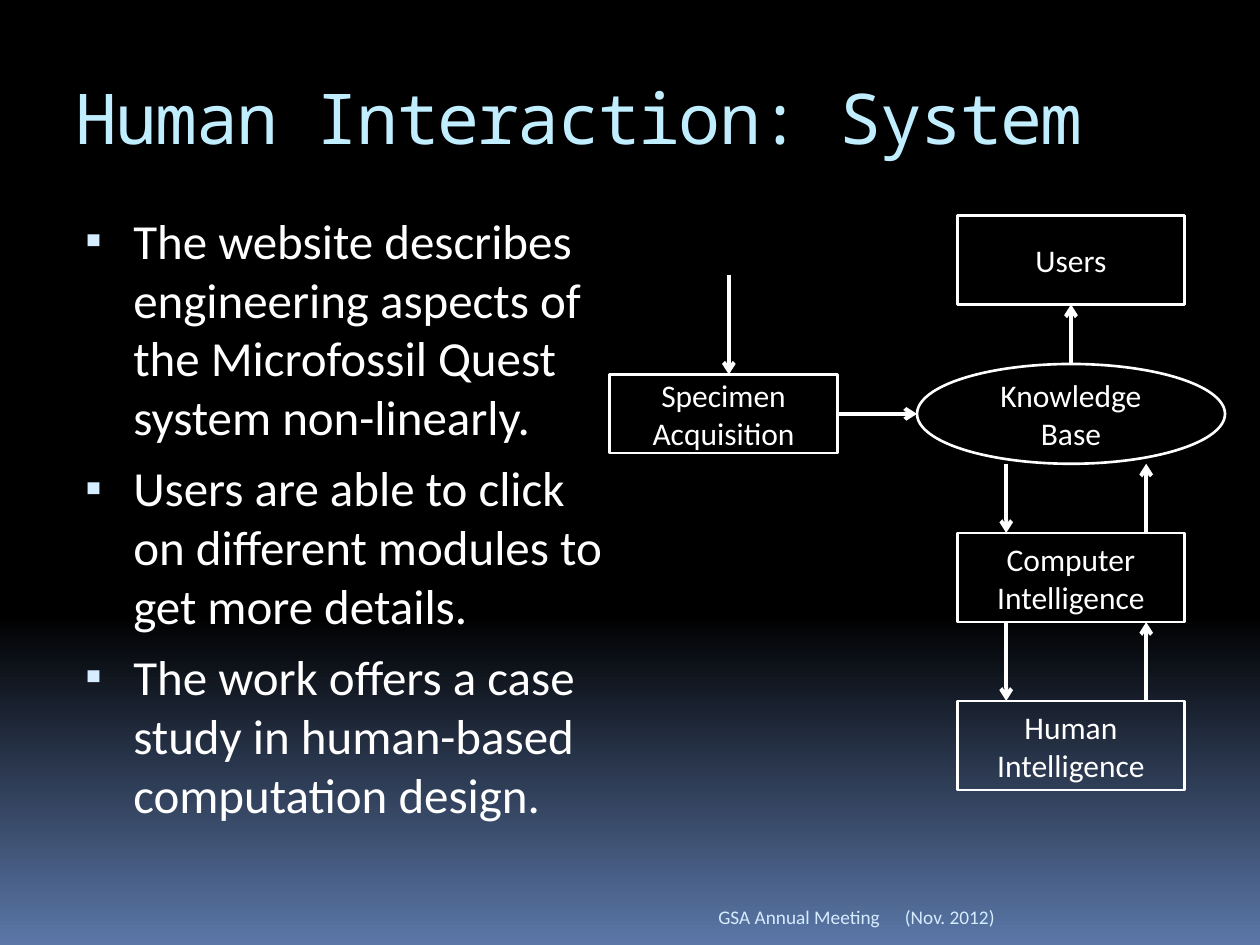
from copy import deepcopy

from pptx import Presentation
from pptx.dml.color import RGBColor as RGB
from pptx.enum.shapes import MSO_CONNECTOR as Link, MSO_SHAPE as Kind
from pptx.enum.text import MSO_ANCHOR as Anchor, PP_ALIGN as Align
from pptx.oxml.ns import qn
from pptx.oxml.xmlchemy import OxmlElement as Node
from pptx.util import Pt

HUES = {"white": "FFFFFF", "title": "C1EEFF", "pale": "D6ECFF",
        "night": "000000", "dusk": "5B77A8"}
SANS = "Calibri"
MONO = "Noto Sans Mono"

HEAD = {"size": Pt(40), "name": MONO, "hue": "title"}
BODY = {"size": Pt(28), "name": SANS, "hue": "white"}
FOOT = {"size": Pt(11), "name": SANS, "hue": "pale"}
NODE = {"size": Pt(18), "name": SANS, "hue": "white"}

POINTS = [
    "The website describes engineering aspects of the Microfossil Quest "
    "system non-linearly.",
    "Users are able to click on different modules to get more details.",
    "The work offers a case study in human-based computation design.",
]


def hue(key):
    return RGB.from_string(HUES[key])


def style(font, look):
    for key, value in look.items():
        if key == "hue":
            font.color.rgb = hue(value)
        else:
            setattr(font, key, value)


def write(frame, lines, look, align=Align.LEFT, anchor=Anchor.TOP):
    frame.word_wrap = True
    frame.vertical_anchor = anchor
    for i, line in enumerate(lines):
        para = frame.add_paragraph() if i else frame.paragraphs[0]
        para.alignment = align
        run = para.add_run()
        run.text = line
        style(run.font, look)
    return frame


def add_text(slide, area, lines, look, **place):
    box = slide.shapes.add_textbox(*map(Pt, area))
    return write(box.text_frame, lines, look, **place)


def add_node(slide, kind, area, label):
    shape = slide.shapes.add_shape(kind, *map(Pt, area))
    shape.shadow.inherit = False
    shape.fill.background()
    shape.line.color.rgb = hue("white")
    shape.line.width = Pt(1.5)
    write(shape.text_frame, [label], NODE, Align.CENTER, Anchor.MIDDLE)
    return shape


def add_arrow(slide, x1, y1, x2, y2, start=None, end=None):
    line = slide.shapes.add_connector(Link.STRAIGHT, *map(Pt, (x1, y1, x2, y2)))
    line.line.color.rgb = hue("white")
    line.line.width = Pt(2.25)
    tip = Node("a:tailEnd")
    tip.set("type", "arrow")
    line.line._get_or_add_ln().append(tip)
    line._element.spPr.append(Node("a:effectLst"))
    if start:
        line.begin_connect(*start)
    if end:
        line.end_connect(*end)


def add_bullet(para):
    para.space_before = Pt(7)
    props = para._p.get_or_add_pPr()
    props.set("marL", str(Pt(32.4)))
    props.set("indent", str(Pt(-27.4)))
    tint = Node("a:buClr")
    rgb = Node("a:srgbClr")
    rgb.set("val", HUES["pale"])
    tint.append(rgb)
    props.append(tint)
    for tag, key, value in [("buSzPct", "val", "95000"),
                            ("buFont", "typeface", SANS),
                            ("buChar", "char", "▪")]:
        part = Node("a:" + tag)
        part.set(key, value)
        props.append(part)


def paint(slide):
    fill = slide.background.fill
    fill.gradient()
    fill.gradient_angle = 270
    stops = next(slide.element.iter(qn("a:gsLst")))
    stops.insert(1, deepcopy(stops[0]))
    marks = [(0, "night"), (0.65, "night"), (1, "dusk")]
    for stop, (pos, key) in zip(fill.gradient_stops, marks):
        stop.position = pos
        stop.color.rgb = hue(key)


def draw_flow(slide):
    left, wide, high = 547, 130, 51
    mid = left + wide / 2
    row = 236.5
    source = add_node(slide, Kind.RECTANGLE, (348.5, row - 22.5, wide, 45),
                      "Specimen Acquisition")
    tops = {"Users": 123, "Computer Intelligence": 304.5,
            "Human Intelligence": 400.5}
    users, logic, human = [
        add_node(slide, Kind.RECTANGLE, (left, top, wide, high), label)
        for label, top in tops.items()]
    base = add_node(slide, Kind.OVAL, (mid - 88, row - 28.5, 176, 57),
                    "Knowledge Base")

    add_arrow(slide, 478.5, row, mid - 88, row, start=(source, 3))
    add_arrow(slide, mid, 208, mid, 174, start=(base, 0), end=(users, 2))
    add_arrow(slide, 416.5, 157, 416.5, row - 22.5)
    for upper, lower in [(base, logic), (logic, human)]:
        high_y = (upper.top + upper.height).pt if hasattr(
            upper.top + upper.height, "pt") else (upper.top + upper.height) / Pt(1)
        low_y = lower.top.pt
        add_arrow(slide, 575, high_y, 575, low_y)
        add_arrow(slide, 655, low_y, 655, high_y)


def main():
    deck = Presentation()
    deck.slide_width, deck.slide_height = Pt(720), Pt(540)
    slide = deck.slides.add_slide(deck.slide_layouts[6])
    paint(slide)

    title = add_text(slide, (36, 39, 648, 72), ["Human Interaction: System"], HEAD)
    title.paragraphs[0].runs[0].font._element.set("spc", "-100")
    body = add_text(slide, (36.7, 116.6, 318.3, 356.4), POINTS, BODY)
    for para in body.paragraphs:
        add_bullet(para)
    add_text(slide, (510, 505.5, 168, 28.8), ["(Nov. 2012)"], FOOT,
             anchor=Anchor.BOTTOM)
    add_text(slide, (72, 505.5, 438, 28.8), ["GSA Annual Meeting"], FOOT,
             align=Align.RIGHT, anchor=Anchor.BOTTOM)
    draw_flow(slide)
    deck.save("out.pptx")


if __name__ == "__main__":
    main()
